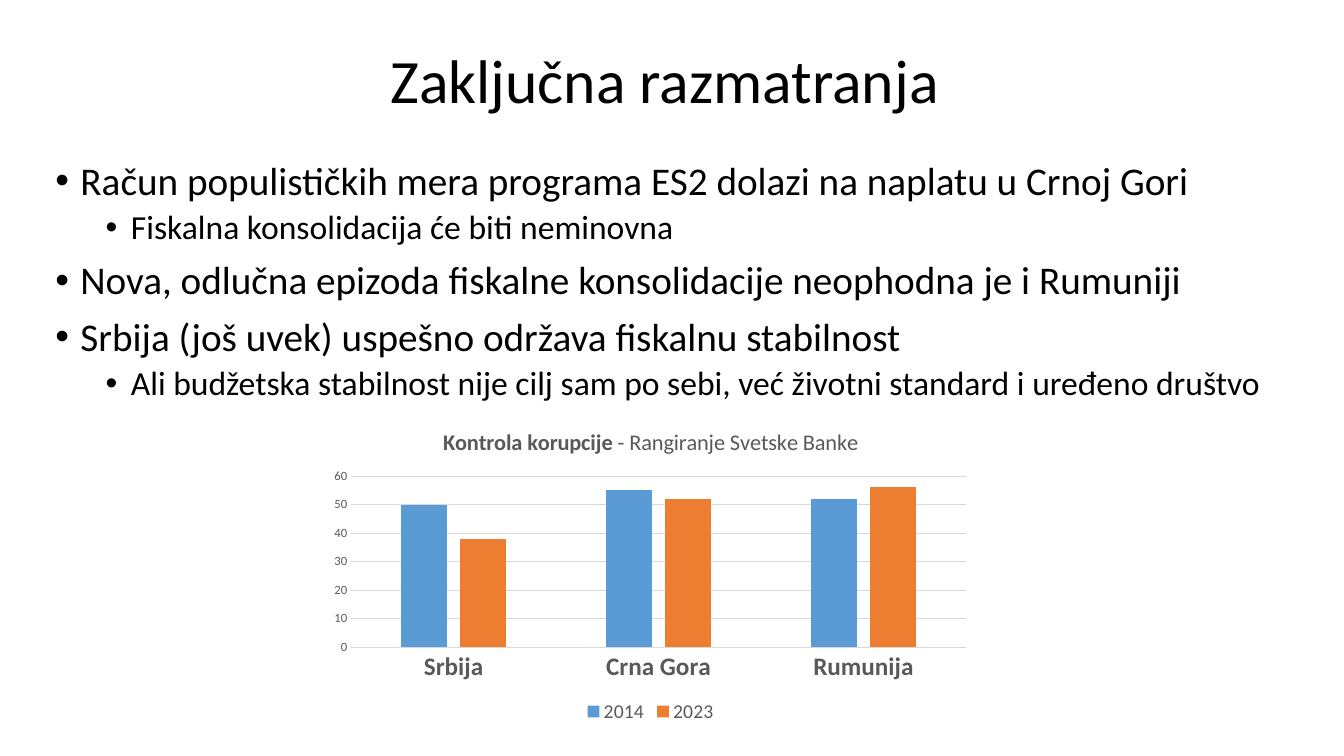
from lxml.etree import SubElement
from pptx import Presentation
from pptx.chart.data import CategoryChartData
from pptx.dml.color import RGBColor
from pptx.enum.chart import XL_CHART_TYPE, XL_LEGEND_POSITION, XL_TICK_MARK
from pptx.enum.text import MSO_ANCHOR, PP_ALIGN
from pptx.oxml.ns import qn
from pptx.util import Pt

FACE = "Calibri"
HUES = {"ink": "000000", "gray": "595959", "grid": "D9D9D9",
        "2014": "5B9BD5", "2023": "ED7D31"}
TITLE = "Zaključna razmatranja "
POINTS = [
    (0, "Račun populističkih mera programa ES2 dolazi na naplatu u Crnoj Gori"),
    (1, "Fiskalna konsolidacija će biti neminovna"),
    (0, "Nova, odlučna epizoda fiskalne konsolidacije neophodna je i Rumuniji"),
    (0, "Srbija (još uvek) uspešno održava fiskalnu stabilnost"),
    (1, "Ali budžetska stabilnost nije cilj sam po sebi, već životni standard i uređeno društvo"),
]
LEVELS = [{"size": 28, "before": 10, "left": 18},
          {"size": 24, "before": 5, "left": 54}]
HANG = 18
LANDS = ["Srbija", "Crna Gora", "Rumunija"]
RANKS = {"2014": (50, 55, 52), "2023": (38, 52, 56)}
HEAD = [("Kontrola korupcije", True), (" - Rangiranje Svetske Banke", False)]
PLOT = {"x": 0.045, "y": 0.2, "w": 0.934, "h": 0.544}


def hue(name):
    return RGBColor.from_string(HUES[name])


def apply(item, **values):
    for key, value in values.items():
        setattr(item, key, value)


def style(font, size, color="gray", bold=False):
    apply(font, name=FACE, size=Pt(size), bold=bold)
    font.color.rgb = hue(color)


def rule(line):
    line.color.rgb = hue("grid")
    line.width = Pt(0.75)


def frame(slide, box, anchor):
    text = slide.shapes.add_textbox(*map(Pt, box)).text_frame
    apply(text, word_wrap=True, vertical_anchor=anchor)
    return text


def write(para, text, size):
    run = para.add_run()
    run.text = text
    style(run.font, size, "ink")
    para.line_spacing = 0.9


def add_title(slide, box):
    para = frame(slide, box, MSO_ANCHOR.MIDDLE).paragraphs[0]
    para.alignment = PP_ALIGN.CENTER
    write(para, TITLE, 44)


def add_points(slide, box):
    body = frame(slide, box, MSO_ANCHOR.TOP)
    for i, (level, text) in enumerate(POINTS):
        para = body.add_paragraph() if i else body.paragraphs[0]
        form = LEVELS[level]
        write(para, text, form["size"])
        apply(para, level=level, space_before=Pt(form["before"]))
        props = para._p.get_or_add_pPr()
        props.set("marL", str(Pt(form["left"])))
        props.set("indent", str(-Pt(HANG)))
        SubElement(props, qn("a:buFont"), typeface="Arial")
        SubElement(props, qn("a:buChar"), char="•")


def place_plot(chart):
    """Fix the inner plot area as fractions of the chart's box."""
    area = chart._chartSpace.chart.plotArea
    layout = area.find(qn("c:layout"))
    if layout is None:
        layout = SubElement(area, qn("c:layout"))
        area.insert(0, layout)
    inner = SubElement(layout, qn("c:manualLayout"))
    SubElement(inner, qn("c:layoutTarget"), val="inner")
    for side in "xy":
        SubElement(inner, qn(f"c:{side}Mode"), val="edge")
    for key, part in PLOT.items():
        SubElement(inner, qn(f"c:{key}"), val=str(part))


def add_ranks(slide, box):
    data = CategoryChartData()
    data.categories = LANDS
    for year, ranks in RANKS.items():
        data.add_series(year, ranks)
    chart = slide.shapes.add_chart(
        XL_CHART_TYPE.COLUMN_CLUSTERED, *map(Pt, box), data).chart
    style(chart.font, 10, "ink")

    head = chart.chart_title.text_frame.paragraphs[0]
    for text, bold in HEAD:
        run = head.add_run()
        run.text = text
        style(run.font, 16, bold=bold)
    chart.chart_title.include_in_layout = False

    plot = chart.plots[0]
    apply(plot, gap_width=219, overlap=-27, vary_by_categories=False)
    for bars in plot.series:
        bars.format.fill.solid()
        bars.format.fill.fore_color.rgb = hue(bars.name)

    lands, scale = chart.category_axis, chart.value_axis
    for axis, size, bold in ((lands, 18, True), (scale, 9, False)):
        apply(axis, major_tick_mark=XL_TICK_MARK.NONE,
              minor_tick_mark=XL_TICK_MARK.NONE)
        style(axis.tick_labels.font, size, bold=bold)
    rule(lands.format.line)
    scale.format.line.fill.background()
    rule(scale.major_gridlines.format.line)
    apply(scale, minimum_scale=0, maximum_scale=60, major_unit=10)

    chart.has_legend = True
    apply(chart.legend, position=XL_LEGEND_POSITION.BOTTOM,
          include_in_layout=False)
    style(chart.legend.font, 14)
    place_plot(chart)


def main():
    deck = Presentation()
    apply(deck, slide_width=Pt(960), slide_height=Pt(540))
    slide = deck.slides.add_slide(deck.slide_layouts[6])
    add_title(slide, (66, 29, 828, 61))
    add_points(slide, (32.4, 111.6, 908.6, 415.4))
    add_ranks(slide, (229.7, 295.2, 470.2, 224.6))
    deck.save("out.pptx")


if __name__ == "__main__":
    main()
